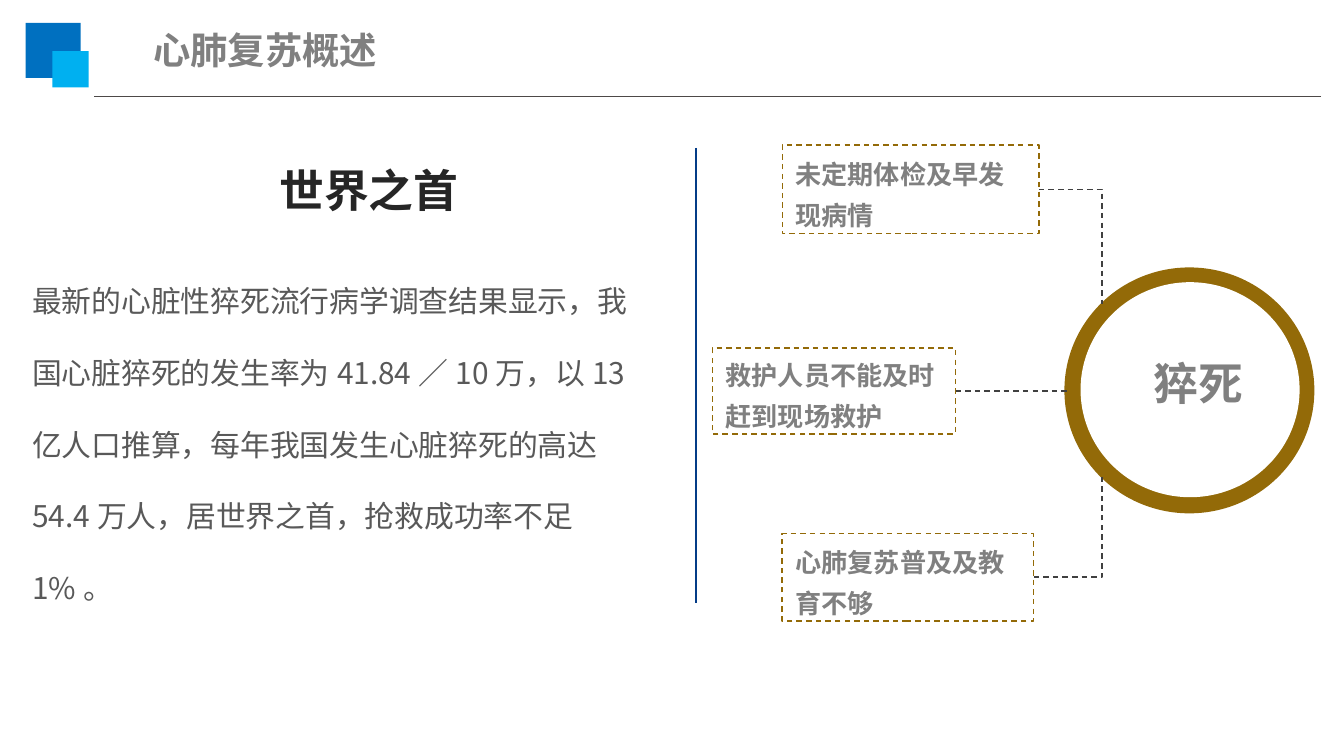
from pptx import Presentation, util as u
from pptx.dml.color import RGBColor
from pptx.enum import dml, shapes, text
from pptx.oxml.ns import qn
from lxml import etree

FONT = "Noto Sans CJK SC"
GOLD, GREY, DARK, WHITE = "936A08", "808080", "404040", "FFFFFF"
RECT, OVAL = shapes.MSO_SHAPE.RECTANGLE, shapes.MSO_SHAPE.OVAL
LINE, BENT = shapes.MSO_CONNECTOR.STRAIGHT, shapes.MSO_CONNECTOR.ELBOW

WIDE = 10
TALL = WIDE * 9 / 16
LOGO = [
    ((0.19, 0.17, 0.41, 0.41), "0070C0"),
    ((0.39, 0.38, 0.27, 0.27), "00B0F0"),
]
RULES = [
    ((9.83, 0.72), (0.7, 0.72), "4D4948"),
    ((5.18, 1.1), (5.18, 4.49), "043C87"),
]
RING = (7.92, 1.99, 1.86, 1.83)
HOLE = (8.04, 2.1, 1.63, 1.6)
CAUSES = [
    ("未定期体检及早发现病情", (5.82, 1.08, 1.91, 0.66), BENT, (8.2, 2.26)),
    ("救护人员不能及时赶到现场救护", (5.3, 2.59, 1.81, 0.64), LINE, (7.94, 2.91)),
    ("心肺复苏普及及教育不够", (5.82, 3.97, 1.87, 0.65), BENT, (8.2, 3.55)),
]
BODY = (
    "最新的心脏性猝死流行病学调查结果显示，我国心脏猝死的发生率为41.84／10万，"
    "以13亿人口推算，每年我国发生心脏猝死的高达54.4万人，居世界之首，抢救成功率不足1%。"
)
LABELS = [
    ("猝死", (8.48, 2.6, 0.87, 0.5),
     dict(size=24, color=GREY, bold=True, align=text.PP_ALIGN.CENTER)),
    (BODY, (0.14, 1.79, 4.72, 2.25), dict(size=16, color="595959", space=2.0)),
    ("世界之首", (1.98, 1.16, 1.53, 0.5),
     dict(size=24, color="262626", bold=True, wrap=False)),
    ("心肺复苏概述", (1.04, 0.15, 1.91, 0.43),
     dict(size=20, color=GREY, bold=True)),
]

prs = Presentation()
prs.slide_width, prs.slide_height = u.Inches(WIDE), u.Inches(TALL)
slide = prs.slides.add_slide(prs.slide_layouts[6])


def rgb(code):
    return RGBColor.from_string(code)


def inch(vals):
    return [u.Inches(v) for v in vals]


def stroke(line, color, dash):
    line.color.rgb = rgb(color)
    line.width = u.Pt(0.75)
    if dash:
        line.dash_style = dml.MSO_LINE.DASH


def block(kind, area, fill, edge=None):
    shape = slide.shapes.add_shape(kind, *inch(area))
    shape.shadow.inherit = False
    shape.fill.solid()
    shape.fill.fore_color.rgb = rgb(fill)
    if edge:
        stroke(shape.line, edge, True)
    else:
        shape.line.fill.background()
    return shape


def link(kind, start, end, color, dash=False):
    con = slide.shapes.add_connector(kind, *inch(start + end))
    stroke(con.line, color, dash)
    props = con._element.spPr
    etree.SubElement(props, qn("a:effectLst"))
    if kind == BENT:
        props.find(qn("a:prstGeom")).set("prst", "bentConnector2")
    return con


def write(shape, words, size, color, bold=False, align=text.PP_ALIGN.LEFT,
          space=None, wrap=True, anchor=text.MSO_ANCHOR.TOP):
    frame = shape.text_frame
    frame.word_wrap = wrap
    frame.vertical_anchor = anchor
    para = frame.paragraphs[0]
    para.alignment = align
    if space:
        para.line_spacing = space
    run = para.add_run()
    run.text = words
    font = run.font
    font.size, font.bold, font.name = u.Pt(size), bold, FONT
    font.color.rgb = rgb(color)
    etree.SubElement(run._r.rPr, qn("a:ea"), typeface=FONT)


for area, fill in LOGO:
    block(RECT, area, fill)
for start, end, color in RULES:
    link(LINE, start, end, color)

block(OVAL, RING, GOLD)
for words, area, kind, end in CAUSES:
    box = block(RECT, area, WHITE, GOLD)
    write(box, words, 14, GREY, bold=True, space=u.Pt(22),
          anchor=text.MSO_ANCHOR.MIDDLE)
    left, top, width, height = area
    con = link(kind, (left + width, top + height / 2), end, DARK, True)
    con.begin_connect(box, 3)
block(OVAL, HOLE, WHITE)

for words, area, style in LABELS:
    write(slide.shapes.add_textbox(*inch(area)), words, **style)

prs.save("out.pptx")
